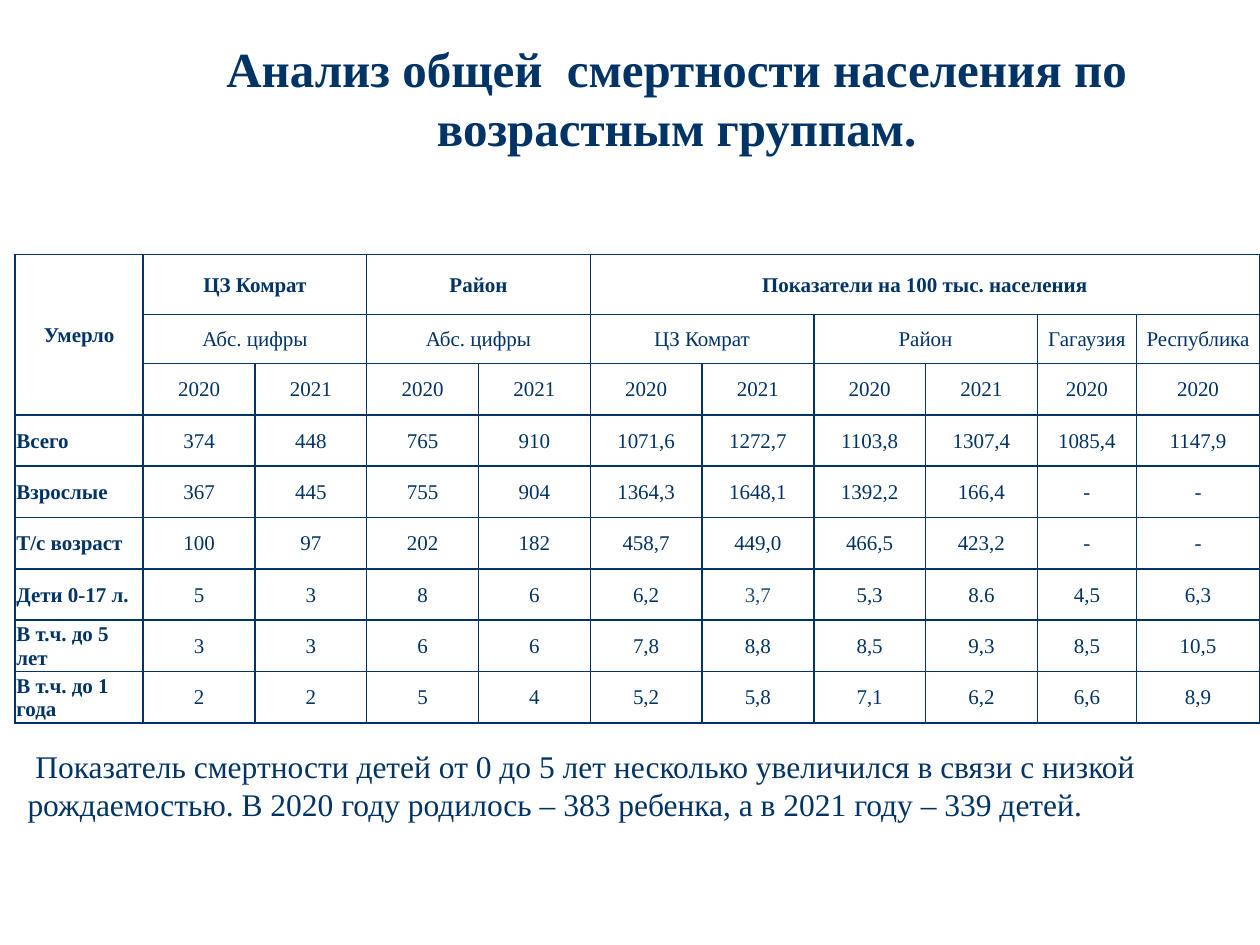
from lxml import etree
from pptx import Presentation
from pptx import util as u
from pptx.dml.color import RGBColor
from pptx.enum import text
from pptx.oxml import ns

NAVY = RGBColor(0x00, 0x33, 0x66)
STEEL = RGBColor(0x1F, 0x4E, 0x78)
MID = text.MSO_ANCHOR.MIDDLE
LEFT, CENTER = text.PP_ALIGN.LEFT, text.PP_ALIGN.CENTER

WIDTHS = [1.02] + [0.89] * 8 + [0.79, 0.98]
HEIGHTS = [0.48, 0.39] + [0.41] * 7
HEAD = [
    ["Умерло", "ЦЗ Комрат", "", "Район", "", "Показатели на 100 тыс. населения"] + [""] * 5,
    ["", "Абс. цифры", "", "Абс. цифры", "", "ЦЗ Комрат", "", "Район", "", "Гагаузия", "Республика"],
    [""] + ["2020", "2021"] * 4 + ["2020", "2020"],
]
DATA = {
    "Всего": "374 448 765 910 1071,6 1272,7 1103,8 1307,4 1085,4 1147,9",
    "Взрослые": "367 445 755 904 1364,3 1648,1 1392,2 166,4 - -",
    "Т/с возраст": "100 97 202 182 458,7 449,0 466,5 423,2 - -",
    "Дети 0-17 л.": "5 3 8 6 6,2 3,7 5,3 8.6 4,5 6,3",
    "В т.ч. до 5 лет": "3 3 6 6 7,8 8,8 8,5 9,3 8,5 10,5",
    "В т.ч. до 1 года": "2 2 5 4 5,2 5,8 7,1 6,2 6,6 8,9",
}
SPANS = [(0, 0, 2, 0), (0, 1, 0, 2), (0, 3, 0, 4), (0, 5, 0, 10),
         (1, 1, 1, 2), (1, 3, 1, 4), (1, 5, 1, 6), (1, 7, 1, 8)]


class Deck:
    """Holds the text style and the current slide; places are in percent of its size."""

    def __init__(self):
        self.prs = Presentation()
        self.prs.slide_width, self.prs.slide_height = u.Inches(10), u.Inches(7.5)
        self.slide = self.prs.slides.add_slide(self.prs.slide_layouts[5])
        self.face, self.ink = "Times New Roman", NAVY

    def place(self, x, y, w, h):
        wide, high = self.prs.slide_width, self.prs.slide_height
        return [round(v * s / 100) for v, s in ((x, wide), (y, high), (w, wide), (h, high))]

    def label(self, frame, words, size, bold=False, align=LEFT, ink=None):
        frame.text = words
        para = frame.paragraphs[0]
        para.alignment = align
        font = para.font
        font.name, font.size, font.bold = self.face, u.Pt(size), bold
        font.color.rgb = ink or self.ink

    def title(self, words, *box):
        head = self.slide.shapes.title
        head.left, head.top, head.width, head.height = self.place(*box)
        head.text_frame.vertical_anchor = MID
        self.label(head.text_frame, words, 28, True, CENTER)

    def note(self, words, *box):
        frame = self.slide.shapes.add_textbox(*self.place(*box)).text_frame
        frame.word_wrap = True
        self.label(frame, words, 18)

    def border(self, cell):
        props = cell._tc.get_or_add_tcPr()
        for side in ("lnL", "lnR", "lnT", "lnB"):
            line = etree.SubElement(props, ns.qn("a:" + side), w=str(u.Pt(1)))
            fill = etree.SubElement(line, ns.qn("a:solidFill"))
            etree.SubElement(fill, ns.qn("a:srgbClr"), val=str(self.ink))

    def table(self, rows, *box):
        box = self.place(*box)
        grid = self.slide.shapes.add_table(len(rows), len(rows[0]), *box).table
        grid.first_row = grid.horz_banding = False
        for col, w in zip(grid.columns, WIDTHS):
            col.width = round(box[2] * w / sum(WIDTHS))
        for row, h in zip(grid.rows, HEIGHTS):
            row.height = round(box[3] * h / sum(HEIGHTS))
        for r, row in enumerate(rows):
            for c, words in enumerate(row):
                cell = grid.cell(r, c)
                self.border(cell)
                cell.fill.background()
                cell.vertical_anchor = MID
                cell.margin_left = cell.margin_right = cell.margin_top = u.Inches(0.01)
                cell.margin_bottom = 0
                side = LEFT if c == 0 and r >= len(HEAD) else CENTER
                ink = STEEL if words == "3,7" else NAVY
                self.label(cell.text_frame, words, 12, r == 0 or c == 0, side, ink)
        for top, left, low, right in SPANS:
            grid.cell(top, left).merge(grid.cell(low, right))


def main():
    deck = Deck()
    deck.title("Анализ общей  смертности населения по возрастным группам.", 13.3, 0, 80.8, 20.67)
    body = [[name] + vals.split() for name, vals in DATA.items()]
    deck.table(HEAD + body, 1.2, 26.93, 98.8, 49.6)
    deck.note(" Показатель смертности детей от 0 до 5 лет несколько увеличился в связи с низкой "
              "рождаемостью. В 2020 году родилось – 383 ребенка, а в 2021 году – 339 детей.",
              1.2, 78.4, 96.9, 9.47)
    deck.prs.save("out.pptx")


if __name__ == "__main__":
    main()
